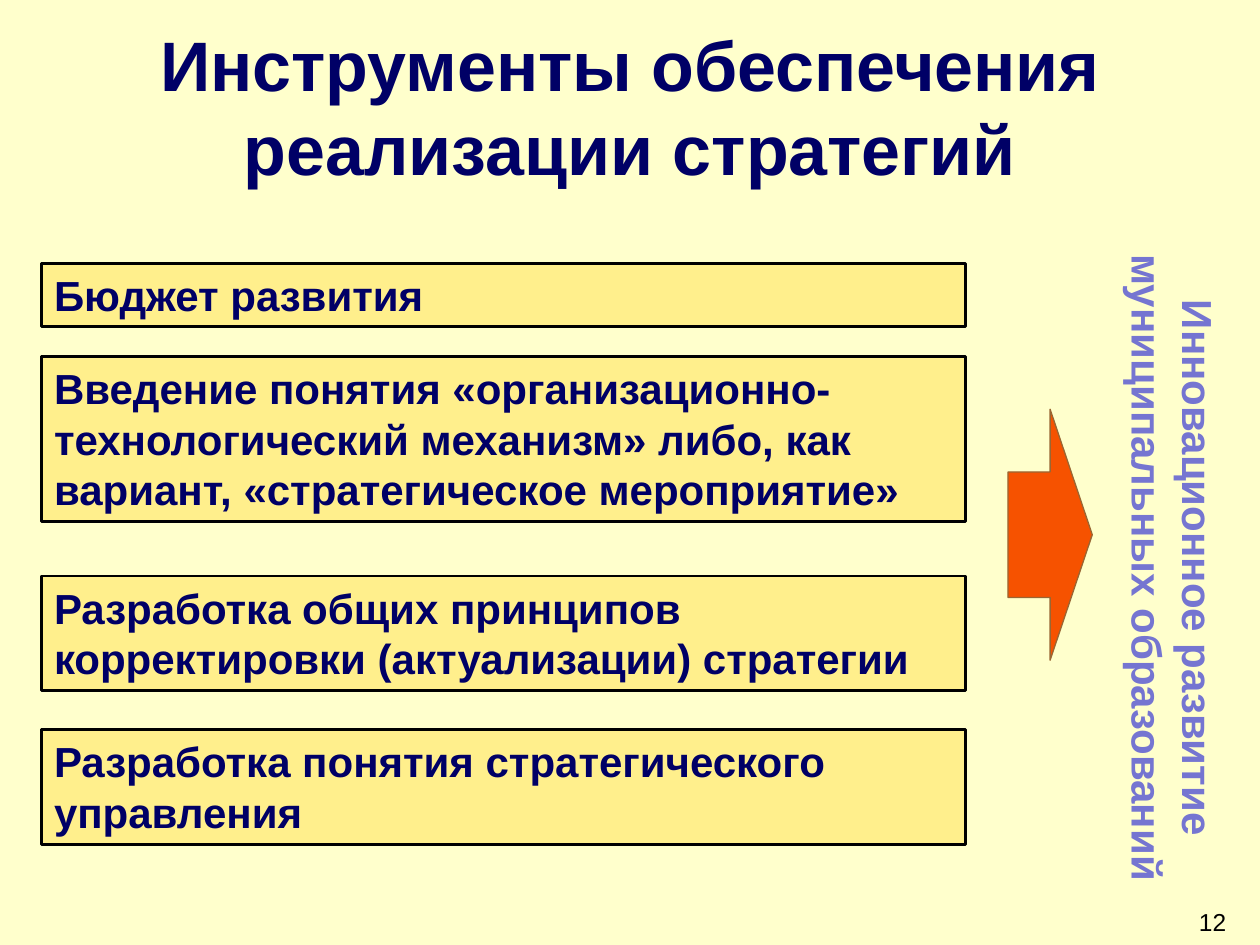
"""Build the slide on instruments that support strategy implementation."""
from dataclasses import dataclass

from lxml import etree
from pptx import Presentation
from pptx import util as u
from pptx.dml.color import RGBColor
from pptx.enum import shapes, text
from pptx.oxml import ns

TITLE = "Инструменты обеспечения реализации стратегий"
INSTRUMENTS = [
    (5.31, 1.27, "Бюджет развития"),
    (7.19, 3.33, "Введение понятия «организационно-технологический механизм» "
                 "либо, как вариант, «стратегическое мероприятие»"),
    (11.61, 2.31, "Разработка общих принципов корректировки (актуализации) стратегии"),
    (14.71, 2.31, "Разработка понятия стратегического управления"),
]
OUTCOME = ["Инновационное развитие", "муниципальных образований"]
PAGE_NUMBER = "12"
CARD_LEFT, CARD_WIDTH = 0.84, 18.62


@dataclass(frozen=True)
class Theme:
    font: str = "Arial"
    background: str = "FFFFCC"
    heading: str = "000066"
    outcome: str = "7575D1"
    black: str = "000000"
    card: str = "FFCC00"
    card_opacity: int = 31
    arrow: str = "F65200"
    arrow_line: str = "996633"
    title_size: int = 40
    body_size: int = 24
    number_size: int = 14


THEME = Theme()


def box(left, top, width, height):
    return [u.Cm(value) for value in (left, top, width, height)]


def write(shape, lines, size, color, align, anchor, bold=True):
    frame = shape.text_frame
    frame.word_wrap = True
    frame.vertical_anchor = anchor
    for index, line in enumerate(lines):
        paragraph = frame.add_paragraph() if index else frame.paragraphs[0]
        paragraph.alignment = align
        run = paragraph.add_run()
        run.text = line
        run.font.name = THEME.font
        run.font.size = u.Pt(size)
        run.font.bold = bold
        run.font.color.rgb = RGBColor.from_string(color)


def add_block(slide, kind, place, fill, line, line_width):
    shape = slide.shapes.add_shape(kind, *place)
    shape.shadow.inherit = False
    shape.fill.solid()
    shape.fill.fore_color.rgb = RGBColor.from_string(fill)
    shape.line.color.rgb = RGBColor.from_string(line)
    shape.line.width = u.Pt(line_width)
    return shape


def set_opacity(shape, percent):
    color = shape.element.spPr.find(ns.qn("a:solidFill")).find(ns.qn("a:srgbClr"))
    etree.SubElement(color, ns.qn("a:alpha")).set("val", str(percent * 1000))


def main():
    presentation = Presentation()
    presentation.slide_width, presentation.slide_height = u.Cm(25.4), u.Cm(19.05)
    slide = presentation.slides.add_slide(presentation.slide_layouts[5])
    slide.background.fill.solid()
    slide.background.fill.fore_color.rgb = RGBColor.from_string(THEME.background)
    align, anchor = text.PP_ALIGN, text.MSO_ANCHOR

    title = slide.shapes.title
    title.left, title.top, title.width, title.height = box(0, 1.07, 25.4, 2.11)
    title.text_frame.auto_size = text.MSO_AUTO_SIZE.NONE
    write(title, [TITLE], THEME.title_size, THEME.heading, align.CENTER, anchor.MIDDLE)

    for top, height, label in INSTRUMENTS:
        card = add_block(slide, shapes.MSO_SHAPE.RECTANGLE,
                         box(CARD_LEFT, top, CARD_WIDTH, height),
                         THEME.card, THEME.black, 1.5)
        set_opacity(card, THEME.card_opacity)
        write(card, [label], THEME.body_size, THEME.heading, align.LEFT, anchor.TOP)

    add_block(slide, shapes.MSO_SHAPE.RIGHT_ARROW, box(20.32, 8.25, 1.7, 5.06),
              THEME.arrow, THEME.arrow_line, 0.75)

    outcome = slide.shapes.add_textbox(*box(16.66, 10.29, 13.97, 2.31))
    outcome.rotation = 90
    write(outcome, OUTCOME, THEME.body_size, THEME.outcome, align.CENTER, anchor.TOP)

    number = slide.shapes.add_textbox(*box(19.05, 18.16, 5.92, 1.32))
    write(number, [PAGE_NUMBER], THEME.number_size, THEME.black, align.RIGHT,
          anchor.TOP, bold=False)

    presentation.save("out.pptx")


if __name__ == "__main__":
    main()
